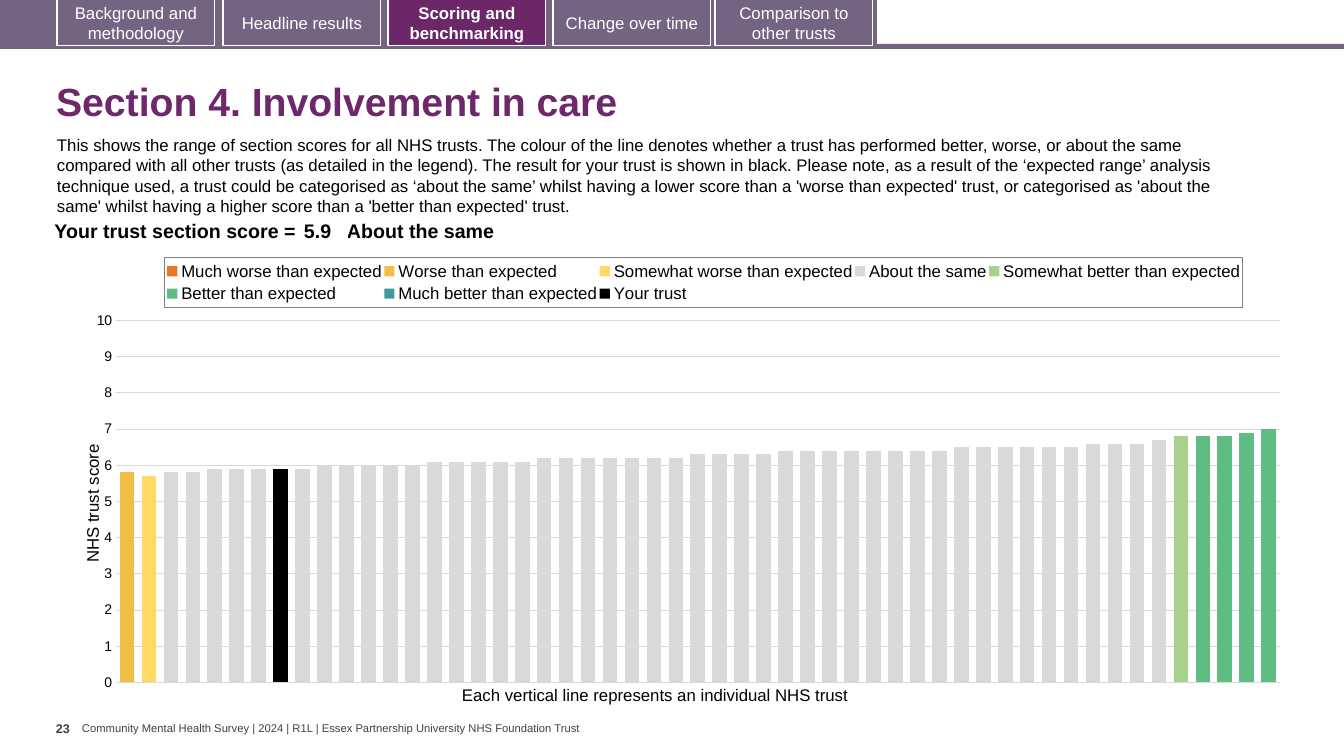
from copy import deepcopy

from lxml import etree
from pptx import Presentation
from pptx.chart.data import CategoryChartData
from pptx.dml.color import RGBColor
from pptx.enum.chart import XL_CHART_TYPE, XL_LEGEND_POSITION, XL_TICK_MARK
from pptx.enum.shapes import MSO_SHAPE
from pptx.enum.text import MSO_ANCHOR, MSO_AUTO_SIZE, PP_ALIGN
from pptx.oxml import parse_xml
from pptx.oxml.ns import nsdecls, qn
from pptx.util import Pt

COLUMNS = XL_CHART_TYPE.COLUMN_CLUSTERED
TOP = XL_LEGEND_POSITION.TOP
NO_TICK = XL_TICK_MARK.NONE
RECT = MSO_SHAPE.RECTANGLE
MIDDLE, UPPER = MSO_ANCHOR.MIDDLE, MSO_ANCHOR.TOP
LEFT, CENTER, RIGHT = PP_ALIGN.LEFT, PP_ALIGN.CENTER, PP_ALIGN.RIGHT
FIXED = MSO_AUTO_SIZE.NONE

WIDTH, HEIGHT = 1344, 756
SCALE = 12192000 / WIDTH
FONT = "Arial"
BLACK, WHITE, GREY = "000000", "FFFFFF", "404040"
MAUVE, PLUM, PURPLE = "756382", "6B2768", "6D276A"

TITLE = "Section 4. Involvement in care"
TABS = [  # label, left, active
    ("Background and methodology", 57, False),
    ("Headline results", 223, False),
    ("Scoring and benchmarking", 388, True),
    ("Change over time", 553, False),
    ("Comparison to other trusts", 715, False),
]
BANDS = [(0, 44, WIDTH, 5), (0, 0, 877, 47)]
INTRO = (
    "This shows the range of section scores for all NHS trusts. The colour of "
    "the line denotes whether a trust has performed better, worse, or about the "
    "same compared with all other trusts (as detailed in the legend). The result "
    "for your trust is shown in black. Please note, as a result of the ‘expected "
    "range’ analysis technique used, a trust could be categorised as ‘about the "
    "same’ whilst having a lower score than a 'worse than expected' trust, or "
    "categorised as 'about the same' whilst having a higher score than a 'better "
    "than expected' trust."
)
FOOTER = ("Community Mental Health Survey | 2024 | R1L | "
          "Essex Partnership University NHS Foundation Trust")
TEXTS = [  # text, box, size, colour, bold, wrap, anchor, insets (x, y)
    (INTRO, (47, 130, 1223, 92), 12, BLACK, False, True, UPPER, (10, 5)),
    ("Each vertical line represents an individual NHS trust",
     (452, 680, 414, 30), 12, BLACK, False, False, UPPER, (10, 5)),
    ("23", (56, 716, 25, 40), 9, GREY, True, False, UPPER, (0, 5)),
    (FOOTER, (82, 722, 505, 13), 8, GREY, False, False, MIDDLE, (0, 0)),
]
SCORE = [  # text, column width, alignment, side margin
    ("Your trust section score =", 265, RIGHT, 4),
    ("5.9", 47, LEFT, 4),
    ("About the same", 866, LEFT, 0),
]
TRUSTS = 53
SAME = [(5.8, 2), (5.9, 5), (6, 5), (6.1, 5), (6.2, 7),
        (6.3, 4), (6.4, 8), (6.5, 6), (6.6, 3), (6.7, 1)]
SERIES = [  # name, colour, first trust, scores
    ("Much worse than expected", "E87722", 0, []),
    ("Worse than expected", "F1BE48", 0, [5.8]),
    ("Somewhat worse than expected", "FFD966", 1, [5.7]),
    ("About the same", "D9D9D9", 2, [v for v, n in SAME for _ in range(n)]),
    ("Somewhat better than expected", "A9D18E", 48, [6.8]),
    ("Better than expected", "5FBD83", 49, [6.8, 6.8, 6.9, 7]),
    ("Much better than expected", "419999", 0, []),
    ("Your trust", BLACK, 7, [5.9]),
]
CHART = (67, 249, 1225, 447)


def px(n):
    return round(n * SCALE)


def rgb(code):
    return RGBColor.from_string(code)


def paint(part, code):
    part.fill.solid()
    part.fill.fore_color.rgb = rgb(code)


def style(font, size, code, bold=False):
    font.name, font.size, font.bold = FONT, Pt(size), bold
    font.color.rgb = rgb(code)


def block(slide, box, code):
    shape = slide.shapes.add_shape(RECT, *map(px, box))
    shape.shadow.inherit = False
    paint(shape, code)
    shape.line.fill.background()
    return shape


def add_tab(slide, label, left, active):
    tab = block(slide, (left, -1, 158, 47), PLUM if active else MAUVE)
    tab.line.color.rgb = rgb(WHITE)
    tab.line.width = Pt(0.75)
    frame = tab.text_frame
    frame.word_wrap, frame.vertical_anchor = True, MIDDLE
    para = frame.paragraphs[0]
    para.text, para.alignment = label, CENTER
    style(para.font, 12, WHITE, active)


def add_title(slide):
    title = slide.shapes.title
    title.left, title.top, title.width, title.height = map(px, (46, 67, 1259, 73))
    frame = title.text_frame
    frame.text, frame.vertical_anchor, frame.auto_size = TITLE, MIDDLE, FIXED
    para = frame.paragraphs[0]
    para.alignment, para.line_spacing = LEFT, 0.9
    style(para.font, 28, PURPLE, True)


def add_text(slide, text, box, size, code, bold, wrap, anchor, inset):
    frame = slide.shapes.add_textbox(*map(px, box)).text_frame
    frame.word_wrap, frame.vertical_anchor = wrap, anchor
    frame.margin_left = frame.margin_right = px(inset[0])
    frame.margin_top = frame.margin_bottom = px(inset[1])
    frame.text = text
    style(frame.paragraphs[0].font, size, code, bold)


def add_score(slide):
    total = sum(col[1] for col in SCORE)
    table = slide.shapes.add_table(1, len(SCORE), *map(px, (35, 217, total, 31))).table
    table.first_row = table.horz_banding = False
    for i, (text, width, align, side) in enumerate(SCORE):
        table.columns[i].width = px(width)
        cell = table.cell(0, i)
        cell.fill.background()
        cell.margin_left = cell.margin_right = px(side)
        cell.margin_top = cell.margin_bottom = px(4)
        cell.text = text
        para = cell.text_frame.paragraphs[0]
        para.alignment = align
        style(para.font, 14, BLACK, True)


def place(part, index, inner=False, **spots):
    """Pin a chart part at fractions of the chart area."""
    for old in part.findall(qn("c:layout")):
        part.remove(old)
    layout = parse_xml(f"<c:layout {nsdecls('c')}><c:manualLayout/></c:layout>")
    rules = {"layoutTarget": "inner"} if inner else {}
    rules.update(xMode="edge", yMode="edge", **spots)
    for tag, val in rules.items():
        etree.SubElement(layout[0], qn(f"c:{tag}")).set("val", str(val))
    part.insert(index, layout)


def split_axis(area):
    """Move the last series to a second pair of axes."""
    bars, cat, val = (area.find(qn(f"c:{tag}")) for tag in ("barChart", "catAx", "valAx"))
    bars2, cat2, val2 = map(deepcopy, (bars, cat, val))
    for ser in bars2.findall(qn("c:ser"))[:-1]:
        bars2.remove(ser)
    bars.remove(bars.findall(qn("c:ser"))[-1])
    for tag in ("title", "majorGridlines"):
        val2.remove(val2.find(qn(f"c:{tag}")))
    for tag, state in (("majorTickMark", "out"), ("tickLblPos", "none"),
                       ("axPos", "r"), ("crosses", "max")):
        val2.find(qn(f"c:{tag}")).set("val", state)
    for part in (bars2, cat2, val2):
        for ref in part.iter(qn("c:axId"), qn("c:crossAx")):
            ref.set("val", ref.get("val").lstrip("-"))
    bars.addnext(bars2)
    val.addnext(val2)
    val2.addnext(cat2)


def add_chart(slide):
    data = CategoryChartData()
    data.categories = [str(n + 1) for n in range(TRUSTS)]
    for name, _, first, scores in SERIES:
        rest = TRUSTS - first - len(scores)
        data.add_series(name, [None] * first + scores + [None] * rest)
    chart = slide.shapes.add_chart(COLUMNS, *map(px, CHART), data).chart
    chart.has_title = False
    style(chart.font, 10, BLACK)
    plot = chart.plots[0]
    plot.gap_width, plot.overlap, plot.vary_by_categories = 50, 100, False
    for ser, (_, code, _, _) in zip(plot.series, SERIES):
        paint(ser.format, code)
        ser.invert_if_negative = False

    chart.category_axis.visible = False
    axis = chart.value_axis
    axis.minimum_scale, axis.maximum_scale, axis.major_unit = 0, 10, 1
    axis.major_tick_mark = axis.minor_tick_mark = NO_TICK
    axis.format.line.fill.background()
    axis.major_gridlines.format.line.color.rgb = rgb("D9D9D9")
    axis.major_gridlines.format.line.width = Pt(0.75)
    style(axis.tick_labels.font, 10, BLACK)
    head = axis.axis_title.text_frame
    head.text = "NHS trust score"
    style(head.paragraphs[0].font, 12, BLACK)

    chart.has_legend = True
    legend = chart.legend
    legend.position, legend.include_in_layout = TOP, False
    style(legend.font, 12, BLACK)
    key = legend.font._element if hasattr(legend.font, "_element") else legend._element
    key = chart._chartSpace.find(".//" + qn("c:legend"))
    key.find(qn("c:txPr")).addprevious(parse_xml(
        f'<c:spPr {nsdecls("c", "a")}><a:ln w="9525"><a:solidFill>'
        '<a:srgbClr val="7F7F7F"/></a:solidFill></a:ln></c:spPr>'))
    area = chart._chartSpace.find(".//" + qn("c:plotArea"))
    place(key, 1, x=0.08, y=0.02, w=0.88, h=0.11)
    place(axis.axis_title._element, 1, x=0.01, y=0.43)
    place(area, 0, inner=True, x=0.04, y=0.16, w=0.95, h=0.81)
    split_axis(area)


def main():
    deck = Presentation()
    deck.slide_width, deck.slide_height = px(WIDTH), px(HEIGHT)
    slide = deck.slides.add_slide(deck.slide_layouts[5])
    for band in BANDS:
        block(slide, band, MAUVE)
    for tab in TABS:
        add_tab(slide, *tab)
    add_title(slide)
    for text in TEXTS:
        add_text(slide, *text)
    add_chart(slide)
    add_score(slide)
    deck.save("out.pptx")


if __name__ == "__main__":
    main()
